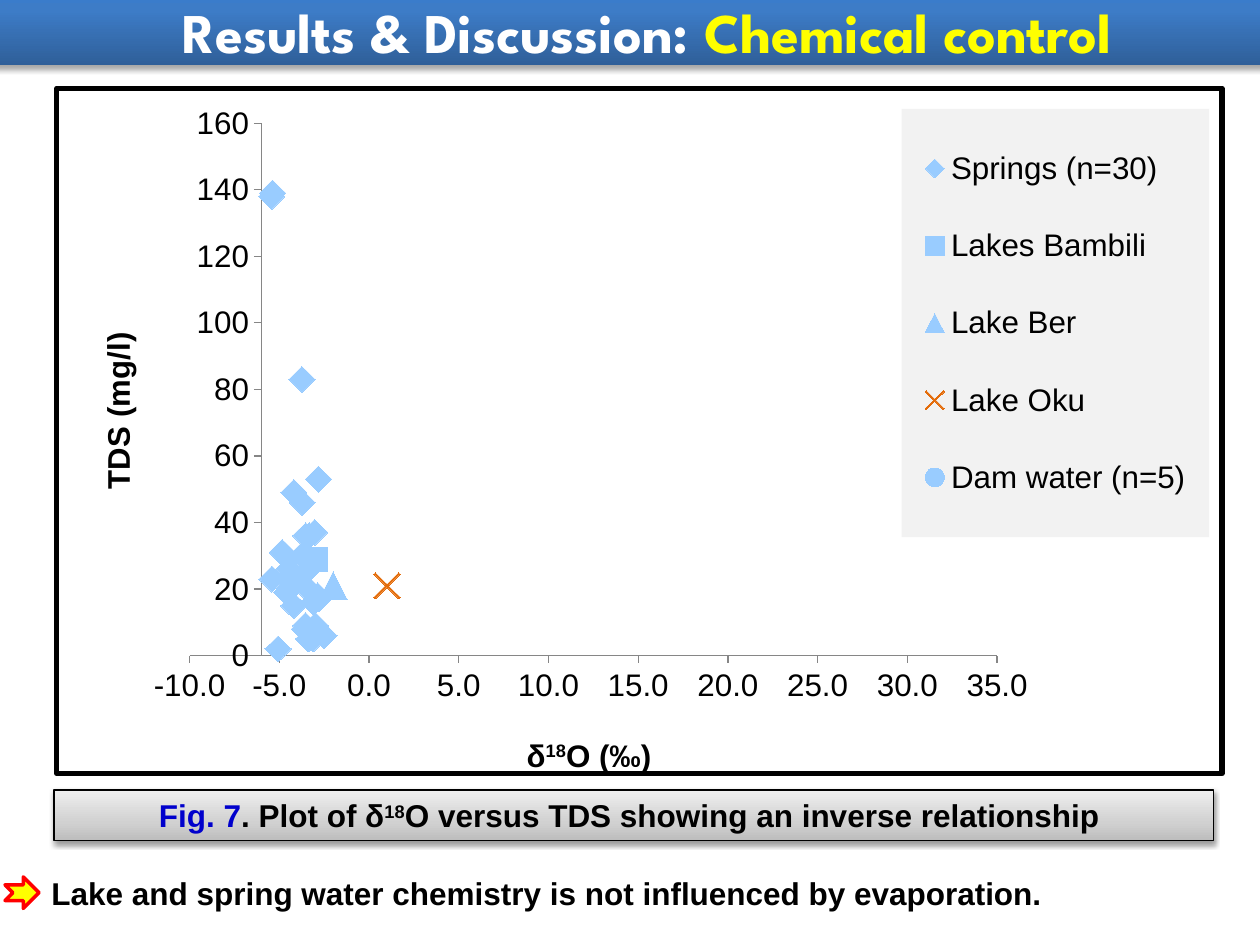
from lxml import etree
from pptx import Presentation
from pptx.chart.data import XyChartData
from pptx.dml.color import RGBColor
from pptx.enum.chart import XL_CHART_TYPE, XL_LEGEND_POSITION, XL_MARKER_STYLE, XL_TICK_MARK
from pptx.enum.shapes import MSO_SHAPE
from pptx.enum.text import MSO_ANCHOR, MSO_AUTO_SIZE, PP_ALIGN
from pptx.oxml import parse_xml
from pptx.oxml.ns import qn
from pptx.util import Inches, Pt

SCATTER = XL_CHART_TYPE.XY_SCATTER
RIGHT = XL_LEGEND_POSITION.RIGHT
MARK = XL_MARKER_STYLE
OUT, NO_TICK = XL_TICK_MARK.OUTSIDE, XL_TICK_MARK.NONE
RECT, ARROW = MSO_SHAPE.RECTANGLE, MSO_SHAPE.NOTCHED_RIGHT_ARROW
CENTER, MIDDLE = PP_ALIGN.CENTER, MSO_ANCHOR.MIDDLE
FIXED = MSO_AUTO_SIZE.NONE

COLORS = {
    "black": "000000", "white": "FFFFFF", "yellow": "FFFF00", "red": "FF0000",
    "navy": "0000CC", "sky": "99CCFF", "orange": "E46C0A", "axis": "868686",
    "legend": "F2F2F2",
}
BANNER = [(0, "2F5F99"), (80, "3D7CC7"), (100, "3A7CCB")]
SILVER = [(0, "BDBDBD"), (35, "D1D1D1"), (100, "EEEEEE")]
A_NS = 'xmlns:a="http://schemas.openxmlformats.org/drawingml/2006/main"'
C_NS = 'xmlns:c="http://schemas.openxmlformats.org/drawingml/2006/chart"'

SPRING_X = [-3.76, -3.54, -3.53, -2.98, -3.6, -3.09, -3.59, -3.74, -4.19, -3.73,
            -4.6, -5.38, -5.42, -3.34, -3.54, -3.31, -2.81, -3.03, -3.38, -2.51,
            -4.57, -3.11, -2.82, -2.87, -4.49, -4.47, -4.84, -5.07, -5.41, -4.2]
SPRING_Y = [30, 25, 36, 9, 8, 16, 21, 83, 49, 46, 19, 139, 138, 36, 9,
            7, 17, 37, 5, 6, 23, 5, 53, 18, 29, 26, 31, 2, 23, 15]
SERIES = [
    ("Springs (n=30)", SPRING_X, SPRING_Y, MARK.DIAMOND, 15, "sky"),
    ("Lakes Bambili", [-3], [29], MARK.SQUARE, 14, "sky"),
    ("Lake Ber", [-2], [21], MARK.TRIANGLE, 16, "sky"),
    ("Lake Oku", [1], [21], MARK.X, 15, "orange"),
    ("Dam water (n=5)", [-3], [29], MARK.CIRCLE, 13, "sky"),
]


def rgb(name):
    return RGBColor.from_string(COLORS[name])


def write(par, parts, size, face="Arial"):
    for text, color, base in parts:
        run = par.add_run()
        run.text = text
        font = run.font
        font.name, font.size, font.bold = face, Pt(size), True
        font.color.rgb = rgb(color)
        if base:
            font._element.set("baseline", str(base * 1000))


def shade(shape, stops, alpha, dist):
    marks = "".join(
        f'<a:gs pos="{pos * 1000}"><a:srgbClr val="{color}"/></a:gs>'
        for pos, color in stops)
    props = shape.element.spPr
    props.append(parse_xml(
        f'<a:gradFill {A_NS} rotWithShape="1"><a:gsLst>{marks}</a:gsLst>'
        '<a:lin ang="16200000" scaled="0"/></a:gradFill>'))
    props.append(parse_xml(
        f'<a:effectLst {A_NS}><a:outerShdw blurRad="{Pt(3.1)}" dist="{Pt(dist)}" '
        'dir="5400000" rotWithShape="0"><a:srgbClr val="000000">'
        f'<a:alpha val="{alpha * 1000}"/></a:srgbClr></a:outerShdw></a:effectLst>'))


def lay(node, index, inner=False, **spots):
    old = node.find(qn("c:layout"))
    if old is not None:
        node.remove(old)
    layout = parse_xml(f"<c:layout {C_NS}><c:manualLayout/></c:layout>")
    rules = {"layoutTarget": "inner"} if inner else {}
    rules.update(xMode="edge", yMode="edge", **spots)
    for tag, value in rules.items():
        etree.SubElement(layout[0], qn(f"c:{tag}")).set("val", str(value))
    node.insert(index, layout)


def style(node, body):
    node.find(qn("c:txPr")).addprevious(
        parse_xml(f"<c:spPr {C_NS} {A_NS}>{body}</c:spPr>"))


def set_axis(axis, low, high, step, form, parts):
    axis.minimum_scale, axis.maximum_scale, axis.major_unit = low, high, step
    axis.has_major_gridlines = False
    axis.major_tick_mark, axis.minor_tick_mark = OUT, NO_TICK
    axis.tick_labels.number_format = form
    axis.tick_labels.number_format_is_linked = False
    axis.format.line.color.rgb = rgb("axis")
    write(axis.axis_title.text_frame.paragraphs[0], parts, 18)


def add_plot(slide, box):
    data = XyChartData()
    for name, xs, ys, *_ in SERIES:
        group = data.add_series(name)
        for x, y in zip(xs, ys):
            group.add_data_point(x, y)
    chart = slide.shapes.add_chart(SCATTER, *box, data).chart
    chart.has_title = False
    chart.font.name, chart.font.size = "Arial", Pt(18)
    chart.font.color.rgb = rgb("black")
    chart.plots[0].vary_by_categories = False
    for series, (*_, kind, size, color) in zip(chart.plots[0].series, SERIES):
        series.format.line.fill.background()
        marker = series.marker
        marker.style, marker.size = kind, size
        marker.format.fill.solid()
        marker.format.fill.fore_color.rgb = rgb(color)
        if kind == MARK.X:
            marker.format.line.color.rgb = rgb(color)
        else:
            marker.format.line.fill.background()
    set_axis(chart.category_axis, -10, 35, 5, "0.0",
             [("δ", "black", 0), ("18", "black", 30), ("O (‰)", "black", 0)])
    set_axis(chart.value_axis, 0, 160, 20, "0", [("TDS (mg/l)", "black", 0)])
    chart.category_axis.crosses_at = -6
    chart.has_legend = True
    legend = chart.legend
    legend.position, legend.include_in_layout = RIGHT, False
    legend.font.name, legend.font.size = "Arial", Pt(18)
    root = chart.element
    key = root.xpath(".//c:legend")[0]
    below, beside = root.xpath(".//c:valAx/c:title")
    lay(root.xpath(".//c:plotArea")[0], 0, True, x=0.114, y=0.051, w=0.693, h=0.777)
    lay(key, 1, x=0.725, y=0.03, w=0.264, h=0.625)
    lay(below, 1, x=0.4, y=0.94)
    lay(beside, 1, x=0.03, y=0.35)
    style(key, f'<a:solidFill><a:srgbClr val="{COLORS["legend"]}"/></a:solidFill>')
    style(root, f'<a:noFill/><a:ln w="{Pt(3)}"><a:solidFill>'
                f'<a:srgbClr val="{COLORS["black"]}"/></a:solidFill></a:ln>')


def add_title(slide, box):
    title = slide.shapes.title
    title.left, title.top, title.width, title.height = box
    shade(title, BANNER, 35, 1.8)
    frame = title.text_frame
    frame.auto_size, frame.vertical_anchor = FIXED, MIDDLE
    par = frame.paragraphs[0]
    par.alignment = CENTER
    write(par, [("Results & Discussion: ", "white", 0),
                ("Chemical control", "yellow", 0)], 32, "League Spartan")


def add_caption(slide, box):
    plate = slide.shapes.add_shape(RECT, *box)
    shade(plate, SILVER, 38, 1.6)
    plate.line.color.rgb = rgb("black")
    plate.line.width = Pt(0.75)
    frame = plate.text_frame
    frame.word_wrap = True
    par = frame.paragraphs[0]
    par.alignment = CENTER
    write(par, [("Fig. 7", "navy", 0), (". Plot of δ", "black", 0),
                ("18", "black", 30),
                ("O versus TDS showing an inverse relationship ", "black", 0)], 18)


def add_note(slide, box):
    left, top, width, height = box
    group = slide.shapes.add_group_shape()
    arrow = group.shapes.add_shape(
        ARROW, left, top + Inches(0.07), Inches(0.27), Inches(0.25))
    arrow.shadow.inherit = False
    arrow.fill.solid()
    arrow.fill.fore_color.rgb = rgb("yellow")
    arrow.line.color.rgb = rgb("red")
    arrow.line.width = Pt(2)
    gap = Inches(0.27)
    frame = group.shapes.add_textbox(left + gap, top, width - gap, height).text_frame
    frame.word_wrap = True
    write(frame.paragraphs[0], [
        ("Lake and spring water chemistry is not influenced by evaporation.",
         "black", 0)], 18)


def main():
    deck = Presentation()
    deck.slide_width, deck.slide_height = Inches(10), Inches(7.5)
    slide = deck.slides.add_slide(deck.slide_layouts[5])
    regions = [
        (add_plot, (0.43, 0.68, 9.29, 5.51)),
        (add_note, (0.04, 6.89, 9.96, 0.4)),
        (add_caption, (0.43, 6.27, 9.2, 0.4)),
        (add_title, (-0.12, -0.03, 10.51, 0.55)),
    ]
    for build, box in regions:
        build(slide, [Inches(side) for side in box])
    deck.save("out.pptx")


if __name__ == "__main__":
    main()
